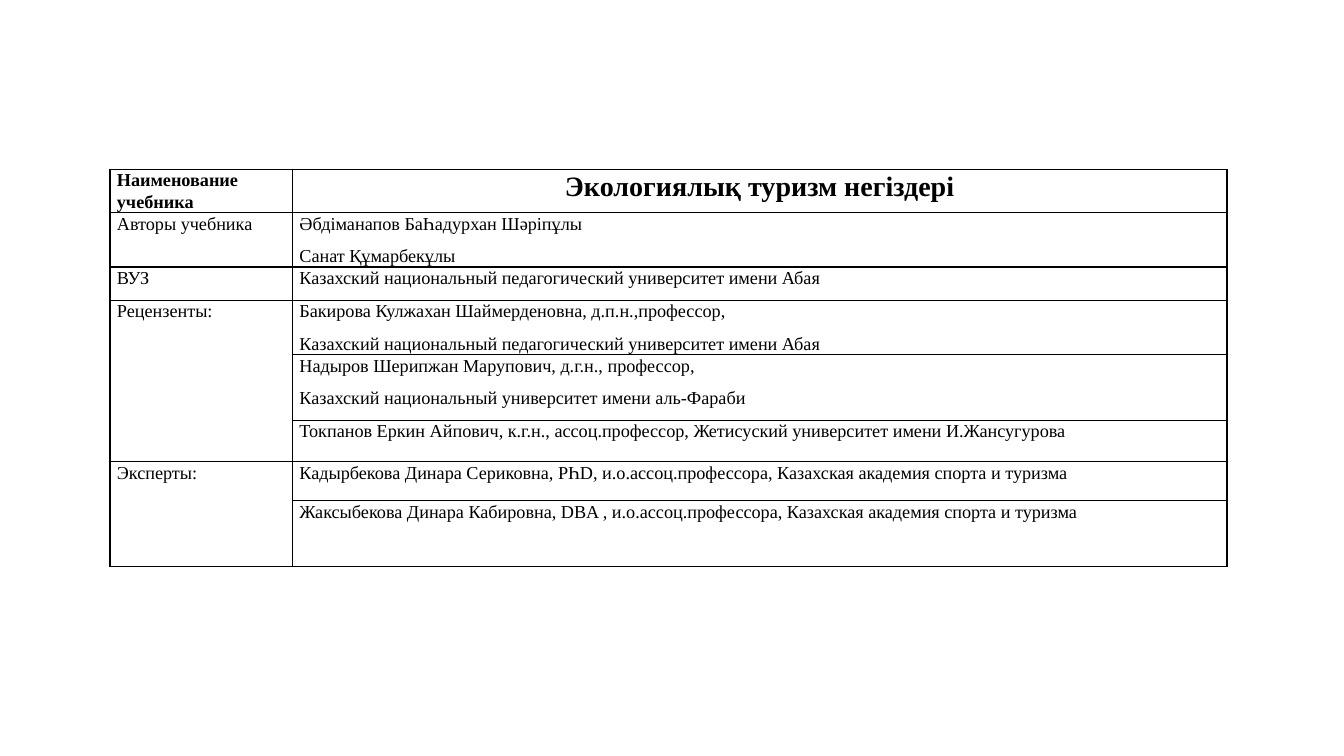
from lxml.etree import SubElement
from pptx import Presentation
from pptx.dml.color import RGBColor
from pptx.enum.text import PP_ALIGN as Align
from pptx.oxml.ns import qn
from pptx.util import Inches, Pt

COLORS = {"text": "000000", "border": "000000", "background": "FFFFFF"}
COLUMN_WIDTHS = [1.81, 9.27]
ROW_HEIGHTS = [0.43, 0.54, 0.33, 0.54, 0.65, 0.41, 0.39, 0.65]
BOOK_HEADER = ("Наименование учебника", "Экологиялық туризм негіздері")
BOOK_DETAILS = [
    ("Авторы учебника", ["Әбдіманапов БаҺадурхан Шәріпұлы\nСанат Құмарбекұлы"]),
    ("ВУЗ", ["Казахский национальный педагогический университет имени Абая"]),
    ("Рецензенты:", [
        "Бакирова Кулжахан Шаймерденовна, д.п.н.,профессор,\n"
        "Казахский национальный педагогический университет имени Абая",
        "Надыров Шерипжан Марупович, д.г.н., профессор,\n"
        "Казахский национальный университет имени аль-Фараби",
        "Токпанов Еркин Айпович, к.г.н., ассоц.профессор, "
        "Жетисуский университет имени И.Жансугурова",
    ]),
    ("Эксперты:", [
        "Кадырбекова Динара Сериковна, PҺD, и.о.ассоц.профессора, "
        "Казахская академия спорта и туризма",
        "Жаксыбекова Динара Кабировна, DBA , и.о.ассоц.профессора, "
        "Казахская академия спорта и туризма",
    ]),
]


def write_text(text_frame, text, size=13, bold=False, align=Align.LEFT):
    """Write one formatted paragraph for each line of the text."""
    for index, line in enumerate(text.split("\n")):
        paragraph = text_frame.add_paragraph() if index else text_frame.paragraphs[0]
        paragraph.alignment = align
        paragraph.line_spacing = 1.07
        paragraph.space_after = Pt(8)
        run = paragraph.add_run()
        run.text = line
        run.font.name = "Times New Roman"
        run.font.size = Pt(size)
        run.font.bold = bold
        run.font.color.rgb = RGBColor.from_string(COLORS["text"])


class SlideBuilder:
    """Hold the table style and the current slide."""

    def __init__(self, slide, border_width=1, side_margin=0.07):
        """Keep the slide and set its background."""
        self.slide = slide
        self.border_width = Pt(border_width)
        self.side_margin = Inches(side_margin)
        fill = slide.background.fill
        fill.solid()
        fill.fore_color.rgb = RGBColor.from_string(COLORS["background"])

    def add_table(self, left, top, widths, heights):
        """Add a plain bordered table and return it."""
        frame = self.slide.shapes.add_table(
            len(heights), len(widths), Inches(left), Inches(top),
            Inches(sum(widths)), Inches(sum(heights)))
        table = frame.table
        table.first_row = table.horz_banding = False
        for column, width in zip(table.columns, widths):
            column.width = Inches(width)
        for row, height in zip(table.rows, heights):
            row.height = Inches(height)
        for cell in table.iter_cells():
            self.style_cell(cell)
        return table

    def style_cell(self, cell):
        """Give a cell its margins, borders and empty fill."""
        cell.margin_left = cell.margin_right = self.side_margin
        cell.margin_top = cell.margin_bottom = 0
        properties = cell._tc.get_or_add_tcPr()
        for side in ("a:lnL", "a:lnR", "a:lnT", "a:lnB"):
            line = SubElement(properties, qn(side), w=str(self.border_width))
            solid_fill = SubElement(line, qn("a:solidFill"))
            SubElement(solid_fill, qn("a:srgbClr"), val=COLORS["border"])
        cell.fill.background()

    def add_book_table(self, left, top):
        """Fill the table, with one label merged over each group of entries."""
        table = self.add_table(left, top, COLUMN_WIDTHS, ROW_HEIGHTS)
        label, title = BOOK_HEADER
        write_text(table.cell(0, 0).text_frame, label, bold=True)
        write_text(table.cell(0, 1).text_frame, title, size=20, bold=True, align=Align.CENTER)
        row = 1
        for label, entries in BOOK_DETAILS:
            label_cell = table.cell(row, 0)
            if len(entries) > 1:
                label_cell.merge(table.cell(row + len(entries) - 1, 0))
            write_text(label_cell.text_frame, label)
            for offset, entry in enumerate(entries):
                write_text(table.cell(row + offset, 1).text_frame, entry)
            row += len(entries)


def main():
    """Build and save the presentation."""
    presentation = Presentation()
    presentation.slide_width = Inches(13.33)
    presentation.slide_height = Inches(7.5)
    slide = presentation.slides.add_slide(presentation.slide_layouts[6])
    SlideBuilder(slide).add_book_table(1.09, 1.68)
    presentation.save("out.pptx")


if __name__ == "__main__":
    main()
